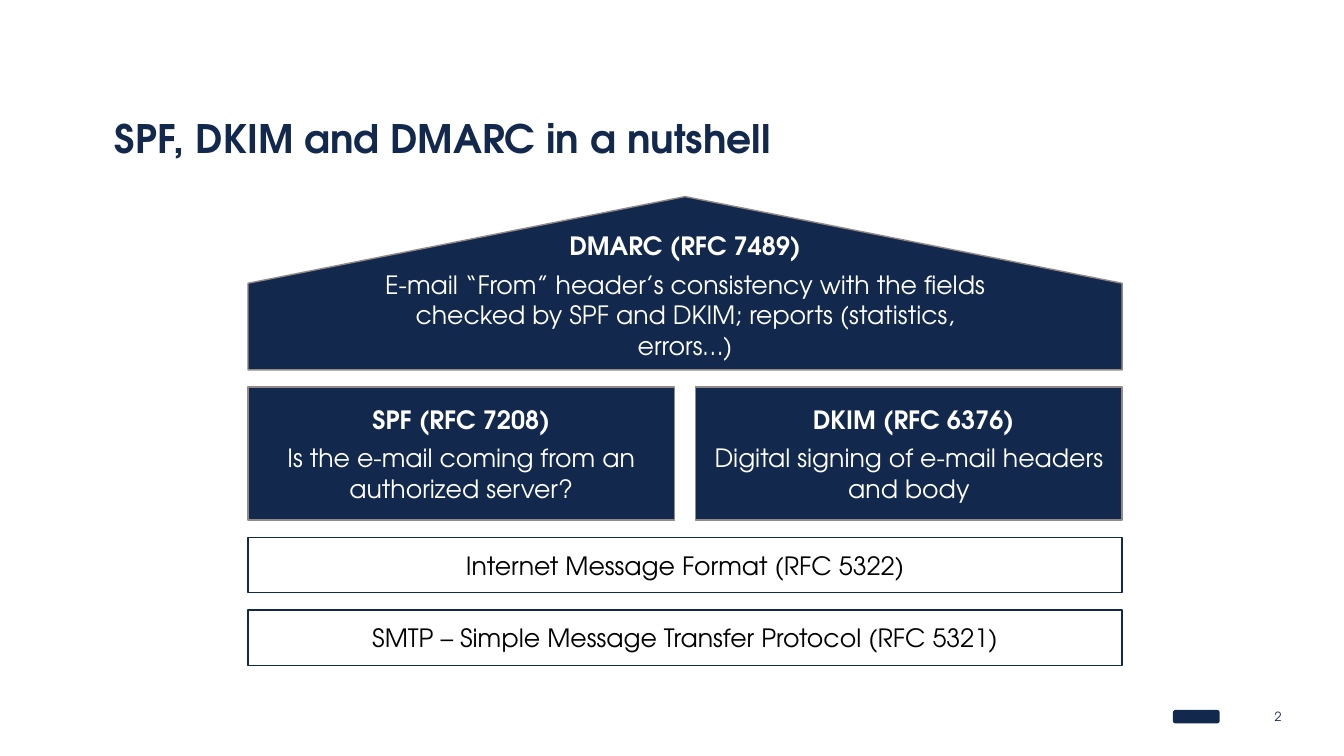
from pptx import Presentation, util as u
from pptx.dml.color import RGBColor
from pptx.enum import shapes, text

NAVY, GREY, WHITE, BLACK = "12284C", "928A86", "FFFFFF", "000000"
FONT = "TeX Gyre Adventor"
KIND = shapes.MSO_SHAPE
MID = text.PP_ALIGN.CENTER
GAP, GUT = 0.17, 0.21
ROWS = {"roof": 1.72, "pillar": 1.32, "format": 0.55, "smtp": 0.55}


def color(code):
    return RGBColor.from_string(code)


def apply(item, style):
    for name, value in style.items():
        setattr(item, name, value)


def inches(box):
    return [u.Inches(v) for v in box]


def write(frame, lines, size, code, align=MID, space=0, **style):
    apply(frame, {"word_wrap": True, "auto_size": text.MSO_AUTO_SIZE.NONE,
                  "vertical_anchor": text.MSO_ANCHOR.MIDDLE, **style})
    for i, (words, bold) in enumerate(lines):
        para = frame.add_paragraph() if i else frame.paragraphs[0]
        apply(para, {"alignment": align, "space_after": u.Pt(space)})
        run = para.add_run()
        run.text = words
        apply(run.font, {"name": FONT, "size": u.Pt(size), "bold": bold})
        run.font.color.rgb = color(code)


def block(slide, box, kind, fill, line):
    shape = slide.shapes.add_shape(kind, *inches(box))
    shape.shadow.inherit = False
    shape.fill.solid()
    shape.fill.fore_color.rgb = color(fill)
    shape.line.color.rgb = color(line)
    shape.line.width = u.Pt(1)
    return shape


def heading(slide, box):
    title = slide.shapes.title
    apply(title, dict(zip(("left", "top", "width", "height"), inches(box))))
    write(title.text_frame, [("SPF, DKIM and DMARC in a nutshell", True)], 28, NAVY,
          text.PP_ALIGN.LEFT, vertical_anchor=text.MSO_ANCHOR.BOTTOM)
    title.text_frame.paragraphs[0].line_spacing = 0.9


def roof(slide, box, lines):
    x, y, w, h = box
    turned = (x + (w - h) / 2, y + (h - w) / 2, h, w)
    block(slide, turned, KIND.PENTAGON, NAVY, GREY).rotation = 270
    label = slide.shapes.add_textbox(*inches((x + 1.24, y + 0.29, w - 2.48, 1.4)))
    write(label.text_frame, lines, 18, WHITE, space=6,
          vertical_anchor=text.MSO_ANCHOR.TOP)


def pillars(slide, box, cells):
    x, y, w, h = box
    wide = (w - GUT) / len(cells)
    for i, lines in enumerate(cells):
        cell = (x + i * (wide + GUT), y, wide, h)
        shape = block(slide, cell, KIND.RECTANGLE, NAVY, GREY)
        write(shape.text_frame, lines, 18, WHITE, space=6)
    last = shape.text_frame.paragraphs
    last[0]._p.get_or_add_pPr().set("marL", str(u.Inches(0.09)))
    last[-1].space_after = u.Pt(0)


def base(slide, box, words):
    shape = block(slide, box, KIND.FLOWCHART_PROCESS, WHITE, NAVY)
    write(shape.text_frame, [(words, False)], 18, BLACK)


def house(slide, x, y, w):
    boxes = {}
    for name, h in ROWS.items():
        boxes[name] = (x, y, w, h)
        y += h + GAP
    roof(slide, boxes["roof"], [
        ("DMARC (RFC 7489)", True),
        ("E-mail “From” header’s consistency with the fields checked by SPF and DKIM; "
         "reports (statistics, errors…)", False)])
    pillars(slide, boxes["pillar"], [
        [("SPF (RFC 7208)", True),
         ("Is the e-mail coming from an authorized server?", False)],
        [("DKIM (RFC 6376)", True),
         ("Digital signing of e-mail headers and body", False)]])
    base(slide, boxes["format"], "Internet Message Format (RFC 5322)")
    base(slide, boxes["smtp"], "SMTP – Simple Message Transfer Protocol (RFC 5321)")


def footer(slide, box):
    x, y, w, h = box
    block(slide, (x, y + 0.14, 0.45, 0.12), KIND.ROUNDED_RECTANGLE, NAVY, NAVY)
    page = slide.shapes.add_textbox(*inches((x + w - 0.7, y, 0.7, h)))
    write(page.text_frame, [("2", False)], 9, NAVY, text.PP_ALIGN.RIGHT)


def main():
    deck = Presentation()
    apply(deck, {"slide_width": u.Inches(13.33), "slide_height": u.Inches(7.5)})
    slide = deck.slides.add_slide(deck.slide_layouts[5])
    heading(slide, (1.04, 0.6, 11.5, 1.06))
    house(slide, 2.46, 1.95, 8.67)
    footer(slide, (11.64, 6.91, 1.17, 0.4))
    deck.save("out.pptx")


if __name__ == "__main__":
    main()
